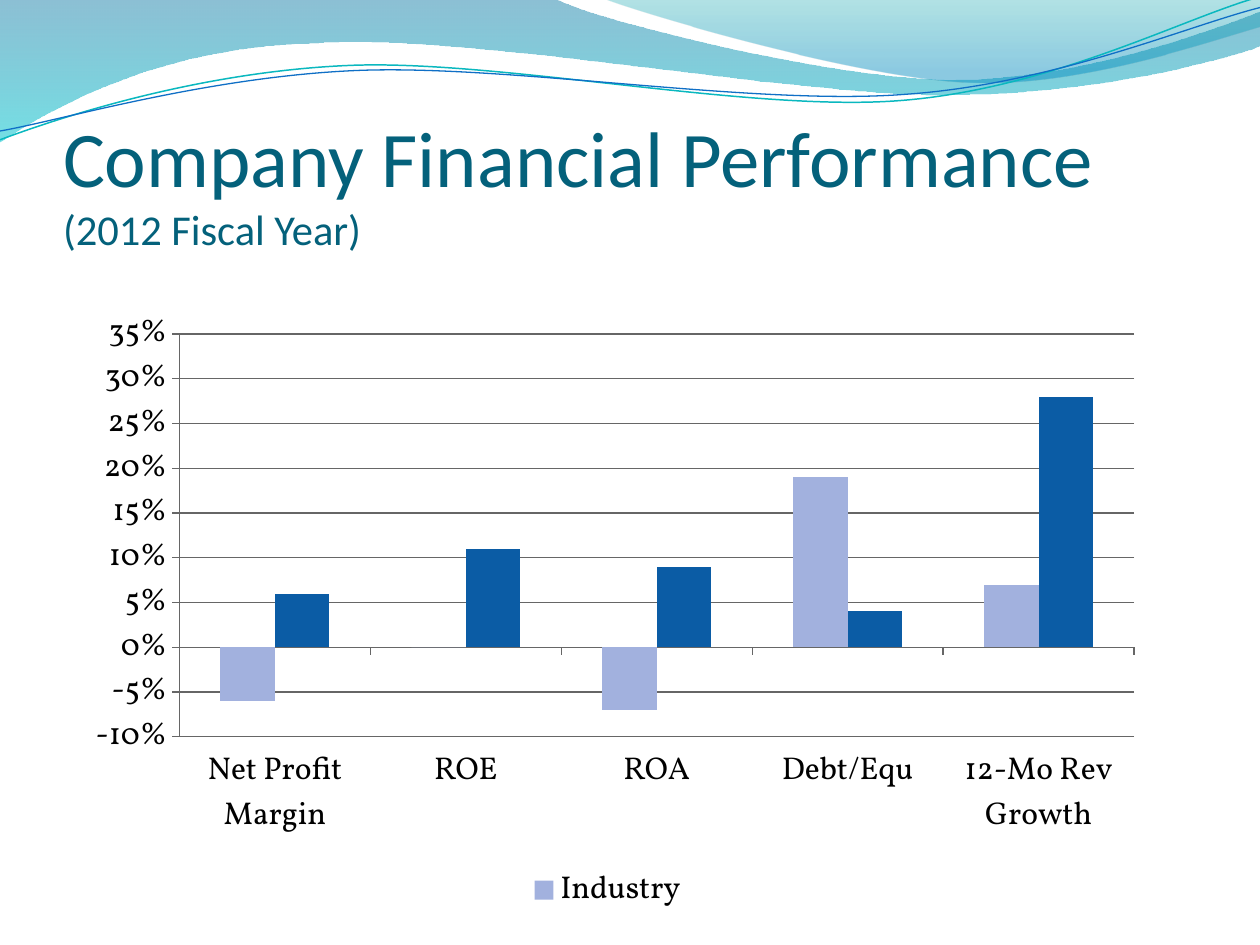
from lxml import etree
from pptx import Presentation
from pptx import util as u
from pptx.chart import data
from pptx.dml.color import RGBColor
from pptx.enum import chart as kinds
from pptx.enum import text
from pptx.oxml import ns, parse_xml

NAVY_TEAL = RGBColor(0x04, 0x61, 0x7B)
TEAL_LINE = RGBColor(0x0A, 0xB8, 0xBF)
BLUE_LINE = RGBColor(0x0F, 0x6F, 0xC6)
PALE_BLUE = RGBColor(0xA2, 0xB1, 0xDE)
DEEP_BLUE = RGBColor(0x0B, 0x5C, 0xA5)
GRID_GRAY = RGBColor(0x66, 0x66, 0x66)
BLACK = RGBColor(0, 0, 0)


def inches(value):
    """Length given in inches, built with Cm."""
    return u.Cm(value * 2.54)


def add_wave(page, start, segments, close):
    """Outline of lines (x, y) and cubic curves (x1, y1, x2, y2, x, y)."""
    points = [pair for segment in segments for pair in zip(segment[::2], segment[1::2])]
    builder = page.shapes.build_freeform(*map(inches, start))
    builder.add_line_segments([(inches(x), inches(y)) for x, y in points], close=close)
    wave = builder.convert_to_shape()
    wave.shadow.inherit = False
    # Join the three line steps of each curve into one cubic segment
    steps = iter(list(wave._element.spPr.iter(ns.qn("a:lnTo"))))
    for segment in segments:
        group = [next(steps) for _ in range(len(segment) // 2)]
        if len(group) == 3:
            curve = etree.Element(ns.qn("a:cubicBezTo"))
            group[0].addprevious(curve)
            for step in group:
                curve.append(step[0])
                step.getparent().remove(step)
    return wave


deck = Presentation()
deck.slide_width, deck.slide_height = inches(10), inches(7.5)
page = deck.slides.add_slide(deck.slide_layouts[5])

# Filled waves: start, segments, gradient stops (position, colour, opacity in %)
bands = [
    ((0, 0),
     [(4.4, -0.01), (4.76, 0.17, 6.64, 0.63, 7.58, 0.63),
      (8.53, 0.63, 9.58, 0.26, 10, 0.09), (10.01, 0.36),
      (9.83, 0.44, 8.7, 0.76, 7.46, 0.75), (6.22, 0.75, 3.82, 0.28, 2.57, 0.34),
      (1.29, 0.36, 0.46, 0.83, -0.01, 1.13)],
     [(0, RGBColor(0x00, 0x74, 0xA1), 45), (1, RGBColor(0x00, 0xC6, 0xCF), 55)]),
    ((4.79, -0.01),
     [(5.09, 0.11, 6.82, 0.62, 7.69, 0.65), (8.56, 0.69, 9.61, 0.32, 10, 0.21), (10, 0)],
     [(0, RGBColor(0x00, 0xA1, 0xA9), 30), (0.8, RGBColor(0x00, 0x8B, 0xBF), 45)]),
]
for start, segments, stops in bands:
    band = add_wave(page, start, segments, True)
    band.line.fill.background()
    band.fill.gradient()
    band.fill.gradient_angle = 270
    for stop, (position, color, _) in zip(band.fill.gradient_stops, stops):
        stop.position = position
        stop.color.rgb = color
    colors = band._element.spPr.iter(ns.qn("a:srgbClr"))
    for color, (_, _, opacity) in zip(colors, stops):
        etree.SubElement(color, ns.qn("a:alpha")).set("val", str(opacity * 1000))

# Thin wave lines
strands = [
    ((0, 1.11), [(0.48, 0.93, 1.58, 0.57, 2.77, 0.52), (3.95, 0.47, 5.93, 0.89, 7.13, 0.8),
                 (8.33, 0.71, 9.38, 0.15, 9.98, -0.02)], TEAL_LINE, 0.85),
    ((0, 1.04), [(0.47, 0.96, 1.64, 0.61, 2.83, 0.56), (4.03, 0.51, 5.97, 0.84, 7.17, 0.75),
                 (8.36, 0.67, 9.41, 0.21, 10, 0.06)], BLUE_LINE, 0.75),
]
for start, segments, color, width in strands:
    strand = add_wave(page, start, segments, False)
    strand.fill.background()
    strand.line.color.rgb = color
    strand.line.width = u.Pt(width)

# Performance chart
figures = data.CategoryChartData(number_format="0%")
figures.categories = ["Net Profit Margin", "ROE", "ROA", "Debt/Equ", "12-Mo Rev Growth"]
figures.add_series("Industry", [-0.06, 0, -0.07, 0.19, 0.07])
figures.add_series("Series 2", [0.06, 0.11, 0.09, 0.04, 0.28])
chart = page.shapes.add_chart(
    kinds.XL_CHART_TYPE.COLUMN_CLUSTERED,
    inches(0.72), inches(2.41), inches(8.39), inches(4.92), figures).chart
chart.has_title = False
chart.font.name, chart.font.size = "Vollkorn", u.Pt(18)
chart.font.color.rgb = BLACK

plot = chart.plots[0]
plot.gap_width, plot.overlap, plot.vary_by_categories = 150, 0, False
for series, color in zip(plot.series, [PALE_BLUE, DEEP_BLUE]):
    series.format.fill.solid()
    series.format.fill.fore_color.rgb = color
    series.invert_if_negative = False

value_axis, category_axis = chart.value_axis, chart.category_axis
value_axis.minimum_scale, value_axis.maximum_scale = -0.1, 0.35
value_axis.major_unit = 0.05
value_axis.has_major_gridlines = True
value_axis.tick_labels.number_format = "0%"
value_axis.tick_labels.number_format_is_linked = False
category_axis.tick_label_position = kinds.XL_TICK_LABEL_POSITION.LOW
for axis in (value_axis, category_axis):
    axis.major_tick_mark = kinds.XL_TICK_MARK.OUTSIDE
    axis.minor_tick_mark = kinds.XL_TICK_MARK.NONE
for part in (value_axis, category_axis, value_axis.major_gridlines):
    part.format.line.color.rgb = GRID_GRAY
    part.format.line.width = u.Pt(0.75)

chart.has_legend = True
chart.legend.position = kinds.XL_LEGEND_POSITION.BOTTOM
chart.legend.include_in_layout = False
# Only the first series is listed in the legend
legend = chart.legend._element
legend.find(ns.qn("c:legendPos")).addnext(parse_xml(
    f'<c:legendEntry {ns.nsdecls("c")}><c:idx val="1"/><c:delete val="1"/></c:legendEntry>'))

# Fixed places of the inner plot area and the legend, as shares of the chart
plot_area = chart._chartSpace.chart.plotArea
edges = [("xMode", "edge"), ("yMode", "edge")]
places = [
    (plot_area, 0, [("layoutTarget", "inner"), *edges,
                    ("x", 0.084), ("y", 0.049), ("w", 0.903), ("h", 0.65)]),
    (legend, 2, [*edges, ("x", 0.41), ("y", 0.9)]),
]
for parent, index, settings in places:
    for old in parent.findall(ns.qn("c:layout")):
        parent.remove(old)
    layout = etree.Element(ns.qn("c:layout"))
    manual = etree.SubElement(layout, ns.qn("c:manualLayout"))
    for tag, value in settings:
        etree.SubElement(manual, ns.qn(f"c:{tag}")).set("val", str(value))
    parent.insert(index, layout)

# Title, in front of the waves
title = page.shapes.title
page.shapes._spTree.append(title._element)
title.left, title.top, title.width, title.height = map(inches, (0.5, 0.77, 9, 1.25))
frame = title.text_frame
frame.margin_left = frame.margin_right = frame.margin_bottom = 0
frame.margin_top = inches(0.05)
frame.word_wrap = True
frame.auto_size = text.MSO_AUTO_SIZE.NONE
frame.vertical_anchor = text.MSO_ANCHOR.BOTTOM
para = frame.paragraphs[0]
para.alignment = text.PP_ALIGN.LEFT
for words, size in [("Company Financial Performance ", 45), ("(2012 Fiscal Year)", 24.3)]:
    span = para.add_run()
    span.text = words
    span.font.name, span.font.size = "Calibri", u.Pt(size)
    span.font.color.rgb = NAVY_TEAL

deck.save("out.pptx")
